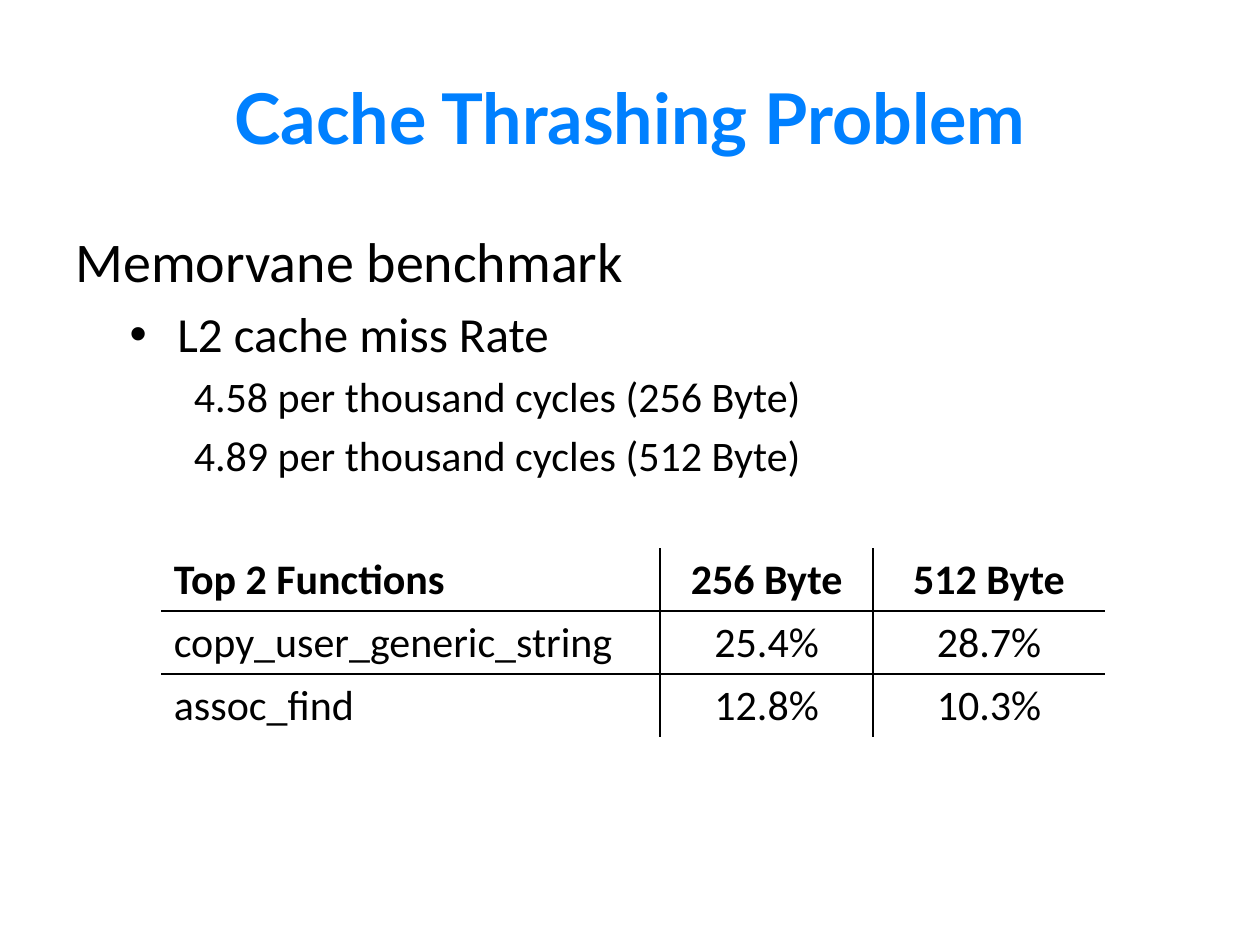
import pptx
import pptx.dml.color
import pptx.enum.text
import pptx.oxml
import pptx.oxml.ns
import pptx.util
from pptx.util import Inches

BLUE = pptx.dml.color.RGBColor(0x00, 0x80, 0xFF)
BLACK = pptx.dml.color.RGBColor(0x00, 0x00, 0x00)
CENTER = pptx.enum.text.PP_ALIGN.CENTER
MIDDLE = pptx.enum.text.MSO_ANCHOR.MIDDLE
NS = pptx.oxml.ns.nsdecls("a")

BODY = [
    ("Memorvane benchmark", 32, 0, 0, None),
    ("L2 cache miss Rate", 28, 0.81, -0.38, "•"),
    ("4.58 per thousand cycles (256 Byte)", 24, 0.94, 0, None),
    ("4.89 per thousand cycles (512 Byte)", 24, 0.94, 0, None),
]
FUNCTION_ROWS = [
    ("Top 2 Functions", "256 Byte", "512 Byte"),
    ("copy_user_generic_string", "25.4%", "28.7%"),
    ("assoc_find", "12.8%", "10.3%"),
]
COLUMN_WIDTHS = (3.96, 1.69, 1.84)


def format_runs(p, size, font="Calibri", color=BLACK, bold=False):
    for r in p.runs:
        r.font.size = pptx.util.Pt(size)
        r.font.name = font
        r.font.color.rgb = color
        r.font.bold = bold


def add_text_frame(s, left, top, width, height):
    tf = s.shapes.add_textbox(
        Inches(left), Inches(top), Inches(width), Inches(height)
    ).text_frame
    tf.word_wrap = True
    return tf


def add_title(s, text):
    tf = add_text_frame(s, 0.5, 0.3, 9, 1.25)
    tf.vertical_anchor = MIDDLE
    p = tf.paragraphs[0]
    p.text = text
    p.alignment = CENTER
    format_runs(p, 40, "Lato", BLUE, True)


def set_indent(p, margin, indent, bullet):
    pPr = p._p.get_or_add_pPr()
    pPr.set("marL", str(Inches(margin)))
    pPr.set("indent", str(Inches(indent)))
    if bullet:
        pPr.append(pptx.oxml.parse_xml(f'<a:buFont {NS} typeface="Arial"/>'))
        pPr.append(pptx.oxml.parse_xml(f'<a:buChar {NS} char="{bullet}"/>'))


def add_body(s, items):
    tf = add_text_frame(s, 0.5, 1.75, 9, 4.95)
    for i, (text, size, margin, indent, bullet) in enumerate(items):
        p = tf.add_paragraph() if i else tf.paragraphs[0]
        p.text = text
        p.space_before = pptx.util.Pt(round(size * 0.2, 1))
        set_indent(p, margin, indent, bullet)
        format_runs(p, size)


def set_borders(cell, edges):
    tcPr = cell._tc.get_or_add_tcPr()
    for edge, shown in edges.items():
        fill = (
            f'<a:solidFill><a:srgbClr val="{BLACK}"/></a:solidFill>'
            if shown
            else "<a:noFill/>"
        )
        tcPr.append(
            pptx.oxml.parse_xml(
                f'<a:ln{edge} {NS} w="{pptx.util.Pt(1)}">{fill}</a:ln{edge}>'
            )
        )


def add_table(s, rows, widths):
    row_height = 0.5
    table = s.shapes.add_table(
        len(rows),
        len(widths),
        Inches(1.28),
        Inches(4.35),
        Inches(sum(widths)),
        Inches(row_height * len(rows)),
    ).table
    table.first_row = False
    table.horz_banding = False
    for column, width in zip(table.columns, widths):
        column.width = Inches(width)
    for i, row in enumerate(rows):
        table.rows[i].height = Inches(row_height)
        for j, text in enumerate(row):
            cell = table.cell(i, j)
            p = cell.text_frame.paragraphs[0]
            p.text = text
            if j:
                p.alignment = CENTER
            format_runs(p, 24, bold=i == 0)
            set_borders(
                cell,
                {
                    "L": j > 0,
                    "R": j < len(row) - 1,
                    "T": i > 0,
                    "B": i < len(rows) - 1,
                },
            )
            cell.fill.background()


def main():
    prs = pptx.Presentation()
    prs.slide_width = Inches(10)
    prs.slide_height = Inches(7.5)
    s = prs.slides.add_slide(prs.slide_layouts[6])
    add_title(s, "Cache Thrashing Problem")
    add_body(s, BODY)
    add_table(s, FUNCTION_ROWS, COLUMN_WIDTHS)
    prs.save("out.pptx")


if __name__ == "__main__":
    main()
